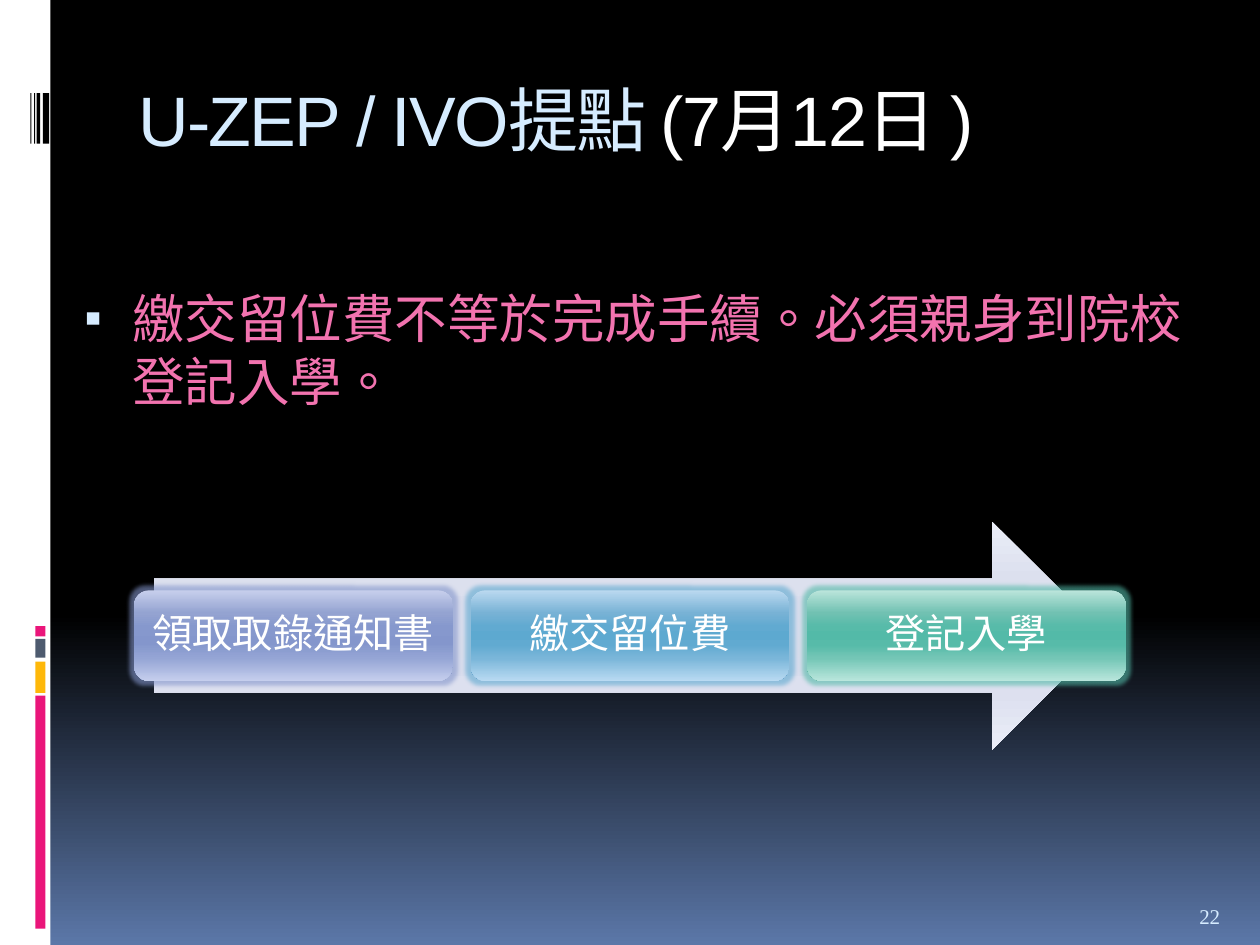
from dataclasses import dataclass
from lxml.etree import SubElement
from pptx import Presentation
from pptx.dml.color import RGBColor
from pptx.enum.lang import MSO_LANGUAGE_ID
from pptx.enum.shapes import MSO_SHAPE
from pptx.enum.text import MSO_ANCHOR, MSO_AUTO_SIZE, PP_ALIGN
from pptx.oxml.ns import qn
from pptx.util import Inches, Pt


@dataclass(frozen=True)
class Theme:
    sans: str = "Arial"
    serif: str = "Times New Roman"
    white: str = "FFFFFF"
    black: str = "000000"
    pale: str = "D6ECFF"
    rose: str = "F273AF"
    pink: str = "EA157A"
    gold: str = "FEB80A"
    slate: str = "4E5B6F"
    head: int = 40
    body: int = 30
    step: int = 23
    note: int = 12


T = Theme()
WIDE, HIGH = 10, 7.5
TITLE = [("U-ZEP / IVO提點 ", T.pale), ("(7月12日 )", T.white)]
BODY = "繳交留位費不等於完成手續。必須親身到院校登記入學。"
PAGE = "22"

SKY = [(0, T.black), (65, T.black), (100, "5B77A8")]
MARKS = (0, 25, 40, 50, 60, 75, 100)
SHEEN = "EAEDF7 DCE0EE D9DDED D9DDEC D9DDED DDE0EF EAEDF8"
STEPS = [
    ("領取取錄通知書", "C7CFEC 94A3D1 8698CD 8496CC 8698CD 95A5D5 C5CEED"),
    ("繳交留位費", "BBD9F0 78B2D5 61AAD1 5DA9D0 61AAD1 7AB6D9 B9DAF2"),
    ("登記入學", "BBE5DB 71C1B2 57BBA9 53BAA8 57BBA9 74C6B6 B9E6DC"),
]

# Side band: blocks as (top, height, colour), bars as (left, width)
BAND = 0.4
BLOCKS = [(5.52, 1.85, T.pink), (5.25, 0.25, T.gold),
          (5.07, 0.15, T.slate), (4.97, 0.08, T.pink)]
BARS = [(0.34, 0.05), (0.29, 0.03), (0.27, 0.01), (0.24, 0.01)]

ARROW = (1.22, 4.14, 7.56, 1.81)
CARD_W, CARD_H, GAP = 2.53, 0.72, 0.14


def inch(box):
    return [Inches(v) for v in box]


def place(shape, box):
    shape.left, shape.top, shape.width, shape.height = inch(box)


def blend(fill, root, stops):
    """Give the fill, held below root, a top-to-bottom gradient."""
    fill.gradient()
    fill.gradient_angle = 270
    track = root.find(".//" + qn("a:gsLst"))
    for old in list(track):
        track.remove(old)
    for mark, color in stops:
        stop = SubElement(track, qn("a:gs"), pos=str(mark * 1000))
        SubElement(stop, qn("a:srgbClr"), val=color)


def draw(slide, kind, box, color=None, sheen=None):
    shape = slide.shapes.add_shape(kind, *inch(box))
    shape.shadow.inherit = False
    shape.line.fill.background()
    if sheen:
        blend(shape.fill, shape._element, zip(MARKS, sheen.split()))
    else:
        shape.fill.solid()
        shape.fill.fore_color.rgb = RGBColor.from_string(color)
    return shape


def glow(shape, color):
    effects = shape._element.spPr.find(qn("a:effectLst"))
    halo = SubElement(effects, qn("a:glow"), rad=str(Pt(5)))
    tint = SubElement(halo, qn("a:srgbClr"), val=color)
    SubElement(tint, qn("a:alpha"), val="60000")


def write(para, text, size, face, color):
    run = para.add_run()
    run.text = text
    font = run.font
    font.size, font.name = Pt(size), face
    font.color.rgb = RGBColor.from_string(color)
    font.language_id = MSO_LANGUAGE_ID.CHINESE_HONG_KONG_SAR
    return run


def frame(shape, anchor):
    text = shape.text_frame
    text.word_wrap = True
    text.auto_size = MSO_AUTO_SIZE.NONE
    text.vertical_anchor = anchor
    return text


def bullet(para, mark, color):
    props = para._p.get_or_add_pPr()
    props.set("marL", str(Inches(0.45)))
    props.set("indent", str(Inches(-0.38)))
    tint = SubElement(props, qn("a:buClr"))
    SubElement(tint, qn("a:srgbClr"), val=color)
    SubElement(props, qn("a:buSzPct"), val="95000")
    SubElement(props, qn("a:buFont"), typeface=T.sans)
    SubElement(props, qn("a:buChar"), char=mark)


def add_band(slide):
    rect = MSO_SHAPE.RECTANGLE
    draw(slide, rect, (0, 0, BAND, HIGH), T.white)
    for top, tall, color in BLOCKS:
        draw(slide, rect, (0.28, top, 0.08, tall), color)
    for left, wide in BARS:
        draw(slide, rect, (left, 0.74, wide, 0.4), T.black)


def add_text(slide):
    title, body = slide.shapes.title, slide.placeholders[1]
    place(title, (1, 0.56, 8.5, 1))
    para = frame(title, MSO_ANCHOR.TOP).paragraphs[0]
    para.alignment = PP_ALIGN.LEFT
    for text, color in TITLE:
        run = write(para, text, T.head, T.sans, color)
        run._r.get_or_add_rPr().set("spc", "-100")

    place(body, (0.5, 1.62, 9, 2.92))
    text = frame(body, MSO_ANCHOR.TOP)
    text.margin_top = Inches(0.65)
    para = text.paragraphs[0]
    para.space_before = Pt(0)
    bullet(para, "▪", T.pale)
    write(para, BODY, T.body, T.serif, T.rose)

    page = slide.shapes.add_textbox(*inch((9.42, 7.02, 0.5, 0.4)))
    para = frame(page, MSO_ANCHOR.BOTTOM).paragraphs[0]
    write(para, PAGE, T.note, T.serif, T.pale)


def add_steps(slide):
    draw(slide, MSO_SHAPE.RIGHT_ARROW, ARROW, sheen=SHEEN)
    count = len(STEPS)
    left = (WIDE - count * CARD_W - (count - 1) * GAP) / 2
    top = ARROW[1] + (ARROW[3] - CARD_H) / 2
    for col, (label, sheen) in enumerate(STEPS):
        box = (left + col * (CARD_W + GAP), top, CARD_W, CARD_H)
        card = draw(slide, MSO_SHAPE.ROUNDED_RECTANGLE, box, sheen=sheen)
        glow(card, sheen.split()[3])
        text = frame(card, MSO_ANCHOR.MIDDLE)
        text.margin_left = text.margin_right = Inches(0.1)
        text.margin_top = text.margin_bottom = Inches(0.1)
        para = text.paragraphs[0]
        para.alignment = PP_ALIGN.CENTER
        para.line_spacing = 0.9
        write(para, label, T.step, T.serif, T.white)


def main():
    deck = Presentation()
    deck.slide_width, deck.slide_height = inch((WIDE, HIGH))
    slide = deck.slides.add_slide(deck.slide_layouts[1])
    blend(slide.background.fill, slide._element, SKY)
    add_band(slide)
    add_text(slide)
    add_steps(slide)
    deck.save("out.pptx")


if __name__ == "__main__":
    main()
